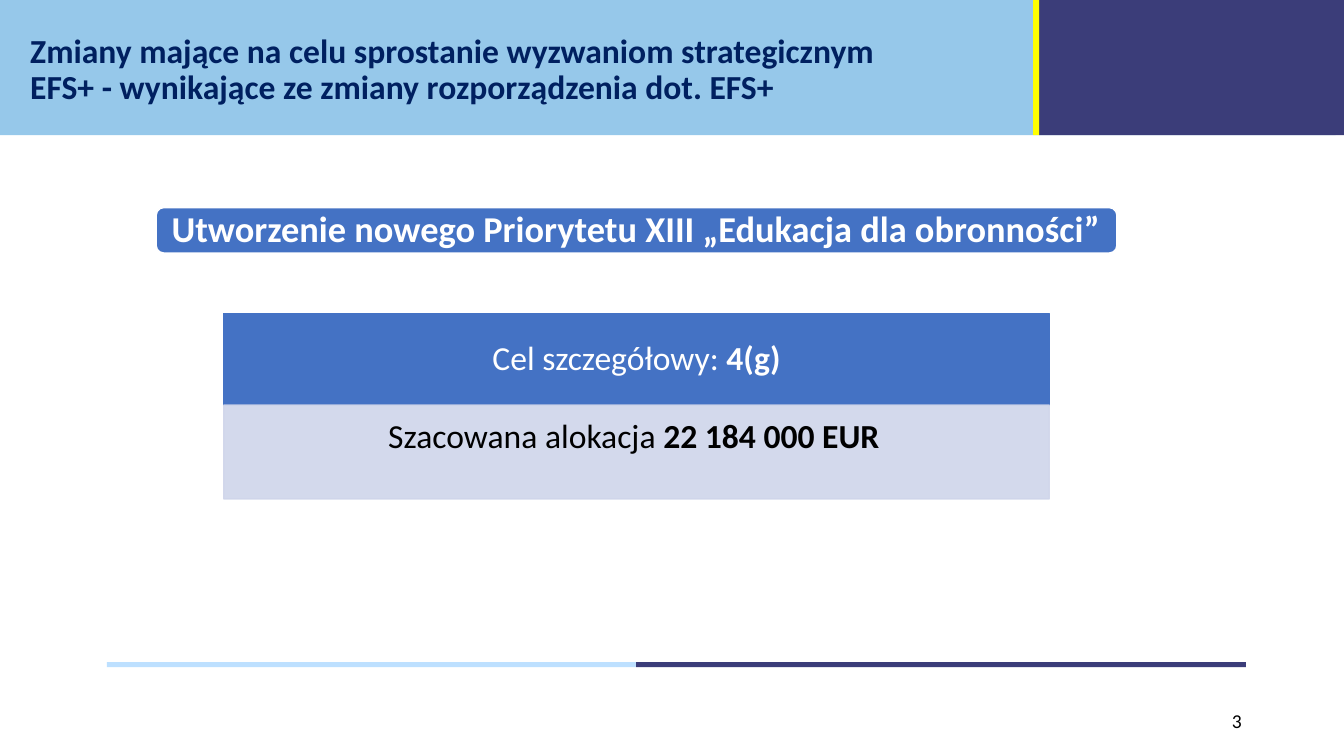
from dataclasses import dataclass

from lxml.etree import SubElement
from pptx import Presentation
from pptx.dml.color import RGBColor
from pptx.enum.shapes import MSO_SHAPE as Shape
from pptx.enum.text import MSO_ANCHOR as Anchor, MSO_AUTO_SIZE as AutoSize, PP_ALIGN as Align
from pptx.oxml.ns import qn
from pptx.util import Pt

TITLE = [
    "Zmiany mające na celu sprostanie wyzwaniom strategicznym",
    "EFS+ - wynikające ze zmiany rozporządzenia dot. EFS+",
]
BANNER = "Utworzenie nowego Priorytetu XIII „Edukacja dla obronności”"
GOAL = ("Cel szczegółowy:\u00a0", "4(g)")
ALLOCATION = ("Szacowana alokacja ", "22 184 000 EUR")
PAGE_NUMBER = "3"


@dataclass(frozen=True)
class Theme:
    font: str = "Calibri"
    sky: str = "96C8EA"
    pale_sky: str = "BDE0FF"
    navy: str = "3B3D79"
    title: str = "002060"
    yellow: str = "FFFF00"
    blue: str = "4472C4"
    lavender: str = "CFD5EA"
    white: str = "FFFFFF"
    black: str = "000000"
    body_size: int = 24
    banner_size: int = 26
    number_size: int = 14


theme = Theme()


def add_block(slide, box, fill, line=None, kind=Shape.RECTANGLE):
    shape = slide.shapes.add_shape(kind, *map(Pt, box))
    shape.shadow.inherit = False
    shape.fill.solid()
    shape.fill.fore_color.rgb = RGBColor.from_string(fill)
    if line:
        shape.line.color.rgb = RGBColor.from_string(line)
        shape.line.width = Pt(1)
    else:
        shape.line.fill.background()
    return shape


def write(shape, lines, size, color, align, insets=(7.2, 3.6, 7.2, 3.6),
          anchor=Anchor.MIDDLE, spacing=0.9):
    frame = shape.text_frame
    frame.word_wrap = True
    frame.auto_size = AutoSize.NONE
    frame.vertical_anchor = anchor
    (frame.margin_left, frame.margin_top,
     frame.margin_right, frame.margin_bottom) = map(Pt, insets)
    for index, parts in enumerate(lines):
        paragraph = frame.add_paragraph() if index else frame.paragraphs[0]
        paragraph.alignment = align
        paragraph.line_spacing = spacing
        paragraph.space_before = Pt(0)
        for text, bold in parts:
            run = paragraph.add_run()
            run.text = text
            run.font.name = theme.font
            run.font.size = Pt(size)
            run.font.bold = bold
            run.font.color.rgb = RGBColor.from_string(color)


def set_opacity(shape, percent):
    for color in shape.element.spPr.iter(qn("a:srgbClr")):
        SubElement(color, qn("a:alpha"), val=str(percent * 1000))


def add_header(slide):
    top, height, split = -4.3, 100.8, 742.3
    add_block(slide, (0, top, 954, height), theme.sky)
    add_block(slide, (split, top, 960 - split, height), theme.navy)
    title = slide.shapes.title
    title.left, title.top, title.width, title.height = map(Pt, (14.4, 0, 723, height))
    write(title, [[(line, True)] for line in TITLE], theme.body_size, theme.title, Align.LEFT)
    slide.shapes.element.append(title.element)
    add_block(slide, (split - 4.3, top, 4.3, height), theme.yellow)


def add_footer(slide):
    left = 76.3
    for width, color in ((378, theme.pale_sky), (435.6, theme.navy)):
        add_block(slide, (left, 473, width, 3.6), color)
        left += width
    number = slide.shapes.add_textbox(*map(Pt, (678.2, 500.4, 216, 28.8)))
    write(number, [[(PAGE_NUMBER, False)]], theme.number_size, theme.black, Align.RIGHT, spacing=1)


def add_priority(slide):
    banner = add_block(slide, (111.6, 148.3, 686.2, 32.4), theme.blue, theme.white,
                       Shape.ROUNDED_RECTANGLE)
    write(banner, [[(BANNER, True)]], theme.banner_size, theme.white, Align.CENTER, (8, 8, 8, 8))
    left, top, width, goal_height, allocation_height = 159.8, 223.9, 589.7, 65.5, 67
    goal = add_block(slide, (left, top, width, goal_height), theme.blue, theme.blue)
    write(goal, [list(zip(GOAL, (False, True)))], theme.body_size, theme.white, Align.CENTER,
          (13.7, 8, 13.7, 8))
    allocation = add_block(slide, (left, top + goal_height, width, allocation_height),
                           theme.lavender, theme.lavender)
    set_opacity(allocation, 90)
    write(allocation, [list(zip(ALLOCATION, (False, True)))], theme.body_size, theme.black,
          Align.CENTER, (10, 10, 13.7, 15), Anchor.TOP)


def main():
    presentation = Presentation()
    presentation.slide_width, presentation.slide_height = Pt(960), Pt(540)
    slide = presentation.slides.add_slide(presentation.slide_layouts[5])
    add_header(slide)
    add_footer(slide)
    add_priority(slide)
    presentation.save("out.pptx")


if __name__ == "__main__":
    main()
